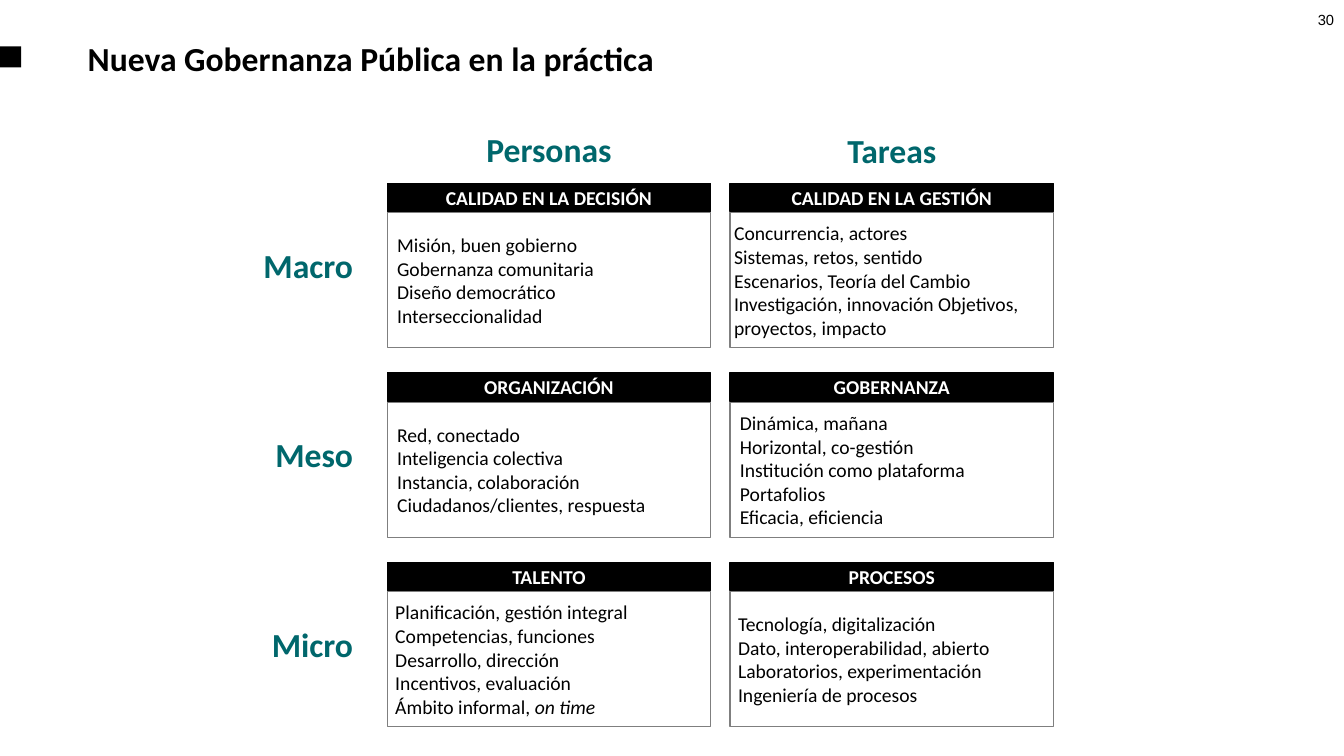
import pptx
import pptx.util
import pptx.dml.color
import pptx.enum.shapes
import pptx.enum.text

Inches = pptx.util.Inches
Pt = pptx.util.Pt
ALIGN = pptx.enum.text.PP_ALIGN
MIDDLE = pptx.enum.text.MSO_ANCHOR.MIDDLE

BLACK, WHITE, GRAY, TEAL = "000000", "FFFFFF", "7F7F7F", "00676C"
LEFT, TOP = 3.84, 1.82
STEP_X, STEP_Y = 3.4, 1.88
WIDTH, HEAD, BODY = 3.21, 0.28, 1.34

COLS = [("Personas", 1.23), ("Tareas", 1.24)]
ROWS = ["Macro", "Meso", "Micro"]

# Each card: heading, side inset, lines; a line is text or (text, italic text)
CARDS = [
    [("CALIDAD EN LA DECISIÓN", 0.1,
      ["Misión, buen gobierno", "Gobernanza comunitaria",
       "Diseño democrático", "Interseccionalidad"]),
     ("CALIDAD EN LA GESTIÓN", 0.04,
      ["Concurrencia, actores", "Sistemas, retos, sentido",
       "Escenarios, Teoría del Cambio",
       "Investigación, innovación Objetivos, proyectos, impacto"])],
    [("ORGANIZACIÓN", 0.1,
      ["Red, conectado", "Inteligencia colectiva",
       "Instancia, colaboración", "Ciudadanos/clientes, respuesta"]),
     ("GOBERNANZA", 0.1,
      ["Dinámica, mañana", "Horizontal, co-gestión",
       "Institución como plataforma", "Portafolios",
       "Eficacia, eficiencia"])],
    [("TALENTO", 0.08,
      ["Planificación, gestión integral", "Competencias, funciones",
       "Desarrollo, dirección", "Incentivos, evaluación",
       ("Ámbito informal, ", "on time")]),
     ("PROCESOS", 0.08,
      ["Tecnología, digitalización", "Dato, interoperabilidad, abierto",
       "Laboratorios, experimentación", "Ingeniería de procesos"])],
]


def color(code):
    return pptx.dml.color.RGBColor.from_string(code)


def add_run(para, text, size, code, bold=False, italic=False, face="Calibri"):
    run = para.add_run()
    run.text = text
    font = run.font
    font.name, font.size = face, Pt(size)
    font.bold, font.italic = bold, italic
    font.color.rgb = color(code)


def add_rect(slide, x, y, w, h, fill, line=None):
    rect = slide.shapes.add_shape(
        pptx.enum.shapes.MSO_SHAPE.RECTANGLE,
        Inches(x), Inches(y), Inches(w), Inches(h))
    rect.shadow.inherit = False
    rect.fill.solid()
    rect.fill.fore_color.rgb = color(fill)
    if line:
        rect.line.color.rgb = color(line)
        rect.line.width = Pt(0)
    else:
        rect.line.fill.background()
    rect.text_frame.vertical_anchor = MIDDLE
    return rect


def add_label(slide, text, x, y, w, h, align, size=24, code=TEAL,
              bold=True, face="Calibri"):
    frame = slide.shapes.add_textbox(
        Inches(x), Inches(y), Inches(w), Inches(h)).text_frame
    frame.word_wrap = True
    para = frame.paragraphs[0]
    para.alignment = align
    add_run(para, text, size, code, bold, face=face)


def add_card(slide, x, y, head, inset, lines):
    # Body with its list
    frame = add_rect(slide, x, y + HEAD + 0.01, WIDTH, BODY,
                     WHITE, GRAY).text_frame
    frame.margin_left = frame.margin_right = Inches(inset)
    for i, line in enumerate(lines):
        para = frame.add_paragraph() if i else frame.paragraphs[0]
        para.alignment = ALIGN.LEFT
        parts = (line,) if isinstance(line, str) else line
        for j, part in enumerate(parts):
            add_run(para, part, 14, BLACK, italic=j > 0)
    # Heading band
    band = add_rect(slide, x, y, WIDTH, HEAD, BLACK, BLACK)
    para = band.text_frame.paragraphs[0]
    para.alignment = ALIGN.CENTER
    add_run(para, head, 14, WHITE, bold=True)


def set_title(slide, text):
    title = slide.shapes.title
    title.left, title.top = Inches(0.77), Inches(0.25)
    title.width, title.height = Inches(11.81), Inches(0.66)
    title.text_frame.vertical_anchor = MIDDLE
    para = title.text_frame.paragraphs[0]
    para.alignment = ALIGN.LEFT
    add_run(para, text, 24, BLACK, bold=True)


def main():
    deck = pptx.Presentation()
    deck.slide_width, deck.slide_height = Inches(13.33), Inches(7.5)
    slide = deck.slides.add_slide(deck.slide_layouts[5])

    # Title, marker and page number
    add_rect(slide, 0, 0.46, 0.21, 0.21, BLACK)
    add_label(slide, "30", 12.79, 0.06, 0.54, 0.4, ALIGN.RIGHT,
              10.5, BLACK, False, "Arial")
    set_title(slide, "Nueva Gobernanza Pública en la práctica")

    # Grid of cards with row labels
    for r, (name, cards) in enumerate(zip(ROWS, CARDS)):
        y = TOP + r * STEP_Y
        add_label(slide, name, 1.74, y + 0.56, 1.86, 0.5, ALIGN.RIGHT)
        for c, card in enumerate(cards):
            add_card(slide, LEFT + c * STEP_X, y, *card)

    # Column labels
    for c, (name, y) in enumerate(COLS):
        add_label(slide, name, LEFT + c * STEP_X, y, WIDTH, 0.5, ALIGN.CENTER)

    deck.save("out.pptx")


if __name__ == "__main__":
    main()
